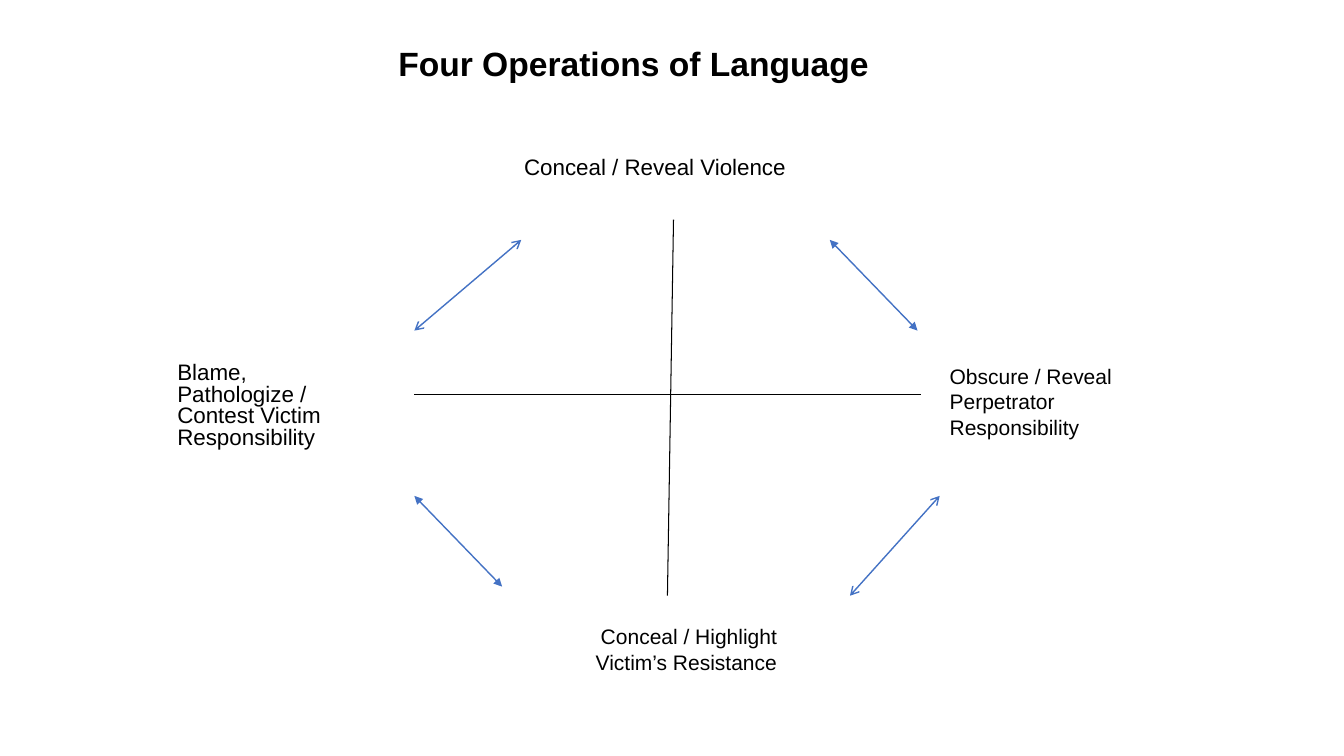
"""Build the Four Operations of Language slide."""
from dataclasses import dataclass

from lxml.etree import SubElement
from pptx import Presentation
from pptx.dml.color import RGBColor
from pptx.enum.shapes import MSO_CONNECTOR
from pptx.enum.text import MSO_ANCHOR, PP_ALIGN
from pptx.oxml.ns import qn
from pptx.slide import Slide
from pptx.text.text import TextFrame
from pptx.util import Inches, Pt

BLACK = RGBColor(0x00, 0x00, 0x00)
BLUE = RGBColor(0x44, 0x72, 0xC4)


@dataclass
class Label:
    text: str
    left: float
    top: float
    width: float
    height: float
    size: int
    spacing: float = 1.0
    indent: float = 0.0


@dataclass
class Line:
    x1: float
    y1: float
    x2: float
    y2: float
    color: RGBColor = BLUE
    weight: float = 1.0
    arrow: str = ""


LABELS = [
    Label("Conceal / Highlight Victim’s Resistance", 5.81, 6.14, 2.08, 0.61, 15, indent=0.05),
    Label("Blame, Pathologize / Contest Victim Responsibility", 1.66, 3.56, 2.19, 0.75, 16, 0.8),
    Label("Conceal / Reveal Violence", 5.1, 1.47, 3.04, 0.37, 16),
    Label("Obscure / Reveal Perpetrator Responsibility", 9.32, 3.56, 2.11, 0.86, 15),
]
LINES = [
    Line(6.68, 2.18, 6.62, 5.91, BLACK, 0.75),
    Line(9.13, 3.91, 4.11, 3.91, BLACK, 0.75),
    Line(4.11, 3.28, 5.17, 2.38, arrow="arrow"),
    Line(8.23, 2.38, 9.1, 3.28, arrow="triangle"),
    Line(4.11, 4.92, 4.98, 5.82, arrow="triangle"),
    Line(9.32, 4.92, 8.43, 5.91, arrow="arrow"),
]


def write(tf: TextFrame, label: Label, bold: bool = False) -> None:
    tf.word_wrap = True
    p = tf.paragraphs[0]
    p.text = label.text
    p.alignment = PP_ALIGN.LEFT
    p.line_spacing = label.spacing
    if label.indent:
        p._p.get_or_add_pPr().set("indent", str(Inches(label.indent)))
    p.font.name = "Arial"
    p.font.size = Pt(label.size)
    p.font.bold = bold
    p.font.color.rgb = BLACK


def add_title(s: Slide, label: Label) -> None:
    sp = s.shapes.title
    sp.left, sp.top = Inches(label.left), Inches(label.top)
    sp.width, sp.height = Inches(label.width), Inches(label.height)
    sp.text_frame.vertical_anchor = MSO_ANCHOR.MIDDLE
    write(sp.text_frame, label, bold=True)


def add_label(s: Slide, label: Label) -> None:
    sp = s.shapes.add_textbox(Inches(label.left), Inches(label.top),
                              Inches(label.width), Inches(label.height))
    write(sp.text_frame, label)


def add_line(s: Slide, line: Line) -> None:
    sp = s.shapes.add_connector(MSO_CONNECTOR.STRAIGHT, Inches(line.x1), Inches(line.y1),
                                Inches(line.x2), Inches(line.y2))
    sp.line.color.rgb = line.color
    sp.line.width = Pt(line.weight)
    if line.arrow:
        ln = sp.line._get_or_add_ln()
        for end in ("a:headEnd", "a:tailEnd"):
            SubElement(ln, qn(end), type=line.arrow)
    SubElement(sp._element.spPr, qn("a:effectLst"))


def main() -> None:
    prs = Presentation()
    prs.slide_width, prs.slide_height = Inches(13.33), Inches(7.5)
    s = prs.slides.add_slide(prs.slide_layouts[5])
    add_title(s, Label("Four Operations of Language", 3.85, 0.27, 7.16, 0.77, 24, 0.9))
    for line in LINES:
        add_line(s, line)
    for label in LABELS:
        add_label(s, label)
    prs.save("out.pptx")


if __name__ == "__main__":
    main()
